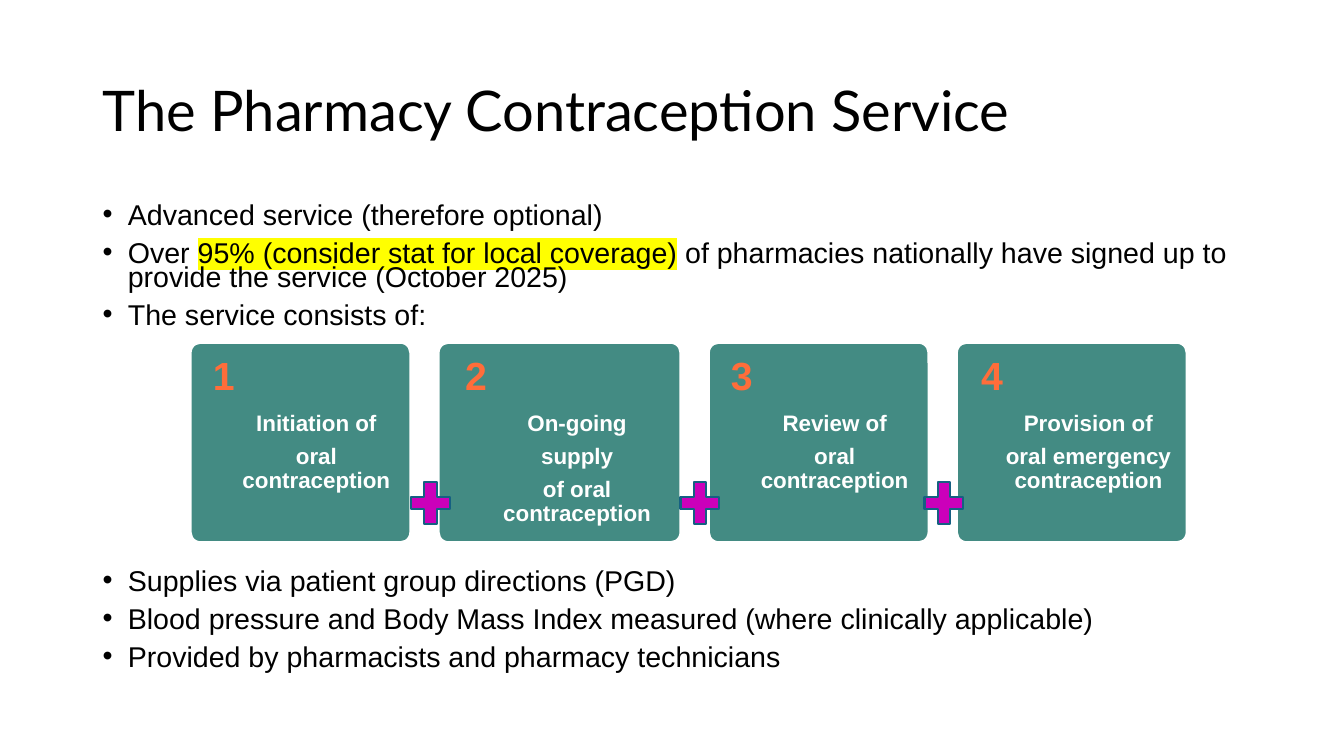
import dataclasses

import pptx
import pptx.dml.color
import pptx.enum.shapes
import pptx.enum.text
import pptx.oxml
import pptx.oxml.ns
import pptx.util

Inches = pptx.util.Inches
Pt = pptx.util.Pt
PP_ALIGN = pptx.enum.text.PP_ALIGN
MSO_ANCHOR = pptx.enum.text.MSO_ANCHOR
MSO_SHAPE = pptx.enum.shapes.MSO_SHAPE


@dataclasses.dataclass(frozen=True)
class Theme:
    text: str = "000000"
    white: str = "FFFFFF"
    highlight: str = "FFFF00"
    card: str = "438B83"
    number: str = "FF6D3A"
    plus: str = "CB00BA"
    plus_line: str = "156082"
    title_font: str = "Lato"
    body_font: str = "Arial"
    title_size: float = 40
    body_size: float = 20.4
    number_size: float = 28
    card_size: float = 16
    line_width: float = 1.5


THEME = Theme()

TITLE = "The Pharmacy Contraception Service"
HIGHLIGHTED = "95% (consider stat for local coverage)"
# Each bullet is a list of its runs.
OVERVIEW = [
    ["Advanced service (therefore optional)"],
    ["Over ", HIGHLIGHTED, " of pharmacies nationally have signed up to "
     "provide the service (October 2025)"],
    ["The service consists of:"],
]
DELIVERY = [
    ["Supplies via patient group directions (PGD)"],
    ["Blood pressure and Body Mass Index measured (where clinically applicable)"],
    ["Provided by pharmacists and pharmacy technicians"],
]
# Card width and wording.
SERVICES = [
    (2.18, ["Initiation of", "oral contraception"]),
    (2.4, ["On-going", "supply", "of oral contraception"]),
    (2.18, ["Review of", "oral contraception"]),
    (2.28, ["Provision of", "oral emergency contraception"]),
]
CARD_GAP = 0.28
NUMBER_SHARE = 0.2
PLUS_CENTERS = [4.27, 6.94, 9.36]
PLUS_WIDTH, PLUS_HEIGHT = 0.52, 0.56


def rgb(value):
    return pptx.dml.color.RGBColor.from_string(value)


def format_run(run, font, size, color, bold=False):
    run.font.name = font
    run.font.size = Pt(size)
    run.font.bold = bold
    run.font.color.rgb = rgb(color)


def highlight_run(run):
    namespace = pptx.oxml.ns.nsdecls("a")
    highlight = pptx.oxml.parse_xml(
        f'<a:highlight {namespace}><a:srgbClr val="{THEME.highlight}"/></a:highlight>')
    fill = run.font.fill
    fill.solid()
    fill.fore_color.rgb = rgb(THEME.text)
    properties = run.font.color and run._r.get_or_add_rPr()
    properties.find(pptx.oxml.ns.qn("a:solidFill")).addnext(highlight)


def add_bullet(paragraph):
    properties = paragraph._p.get_or_add_pPr()
    properties.set("marL", str(Inches(0.25)))
    properties.set("indent", str(Inches(-0.25)))
    namespace = pptx.oxml.ns.nsdecls("a")
    properties.append(pptx.oxml.parse_xml(f'<a:buFont {namespace} typeface="Arial"/>'))
    properties.append(pptx.oxml.parse_xml(f'<a:buChar {namespace} char="•"/>'))


def add_text_frame(slide, left, top, width, height, margins):
    """Add a wrapping text box; margins run left, top, right, bottom."""
    box = slide.shapes.add_textbox(Inches(left), Inches(top), Inches(width), Inches(height))
    frame = box.text_frame
    frame.word_wrap = True
    (frame.margin_left, frame.margin_top,
     frame.margin_right, frame.margin_bottom) = map(Inches, margins)
    return frame


def add_shape(slide, kind, left, top, width, height, fill, line):
    shape = slide.shapes.add_shape(
        kind, Inches(left), Inches(top), Inches(width), Inches(height))
    shape.shadow.inherit = False
    shape.fill.solid()
    shape.fill.fore_color.rgb = rgb(fill)
    shape.line.color.rgb = rgb(line)
    shape.line.width = Pt(THEME.line_width)
    return shape


def add_title(slide, left, top, width, height):
    title = slide.shapes.title
    title.left, title.top = Inches(left), Inches(top)
    title.width, title.height = Inches(width), Inches(height)
    title.text_frame.text = TITLE
    title.text_frame.vertical_anchor = MSO_ANCHOR.MIDDLE
    paragraph = title.text_frame.paragraphs[0]
    paragraph.alignment = PP_ALIGN.LEFT
    paragraph.line_spacing = 0.9
    format_run(paragraph.runs[0], THEME.title_font, THEME.title_size, THEME.text)


def add_bullets(slide, bullets, left, top, width, height):
    frame = add_text_frame(slide, left, top, width, height, (0.1, 0.05, 0.1, 0.05))
    for index, texts in enumerate(bullets):
        paragraph = frame.add_paragraph() if index else frame.paragraphs[0]
        paragraph.line_spacing = 0.7
        paragraph.space_before = Pt(10 if index else 0)
        add_bullet(paragraph)
        for text in texts:
            run = paragraph.add_run()
            run.text = text
            format_run(run, THEME.body_font, THEME.body_size, THEME.text)
            if text == HIGHLIGHTED:
                highlight_run(run)


def add_card_text(frame, text, alignment, size, color):
    frame.text = text
    for paragraph in frame.paragraphs:
        paragraph.alignment = alignment
        paragraph.line_spacing = 0.9
        paragraph.space_after = Pt(6.3)
        format_run(paragraph.runs[0], THEME.body_font, size, color, bold=True)


def add_card(slide, number, lines, left, top, width, height):
    card = add_shape(slide, MSO_SHAPE.ROUNDED_RECTANGLE, left, top, width, height,
                     THEME.card, THEME.white)
    card.adjustments[0] = 0.05
    number_width = NUMBER_SHARE * width
    number_frame = add_text_frame(slide, left, top, number_width, 0.6, (0, 0.14, 0, 0))
    add_card_text(number_frame, str(number), PP_ALIGN.RIGHT,
                  THEME.number_size, THEME.number)
    label_frame = add_text_frame(slide, left + number_width, top, 0.745 * width, height,
                                 (0, 0.69, 0, 0))
    add_card_text(label_frame, "\n".join(lines), PP_ALIGN.CENTER,
                  THEME.card_size, THEME.white)


def add_services(slide, left, top, height):
    """Place the numbered cards in a row, then the plus signs between them."""
    for number, (width, lines) in enumerate(SERVICES, start=1):
        add_card(slide, number, lines, left, top, width, height)
        left += width + CARD_GAP
    for center in PLUS_CENTERS:
        add_shape(slide, MSO_SHAPE.MATH_PLUS, center - PLUS_WIDTH / 2, top + 1.31,
                  PLUS_WIDTH, PLUS_HEIGHT, THEME.plus, THEME.plus_line)


def main():
    presentation = pptx.Presentation()
    presentation.slide_width = Inches(13.33)
    presentation.slide_height = Inches(7.5)
    slide = presentation.slides.add_slide(presentation.slide_layouts[5])
    add_title(slide, 0.92, 0.4, 11.5, 1.45)
    add_bullets(slide, OVERVIEW, 0.92, 2, 11.86, 1.35)
    add_services(slide, 1.89, 3.4, 1.98)
    add_bullets(slide, DELIVERY, 0.92, 5.63, 11.86, 1.13)
    presentation.save("out.pptx")


if __name__ == "__main__":
    main()
